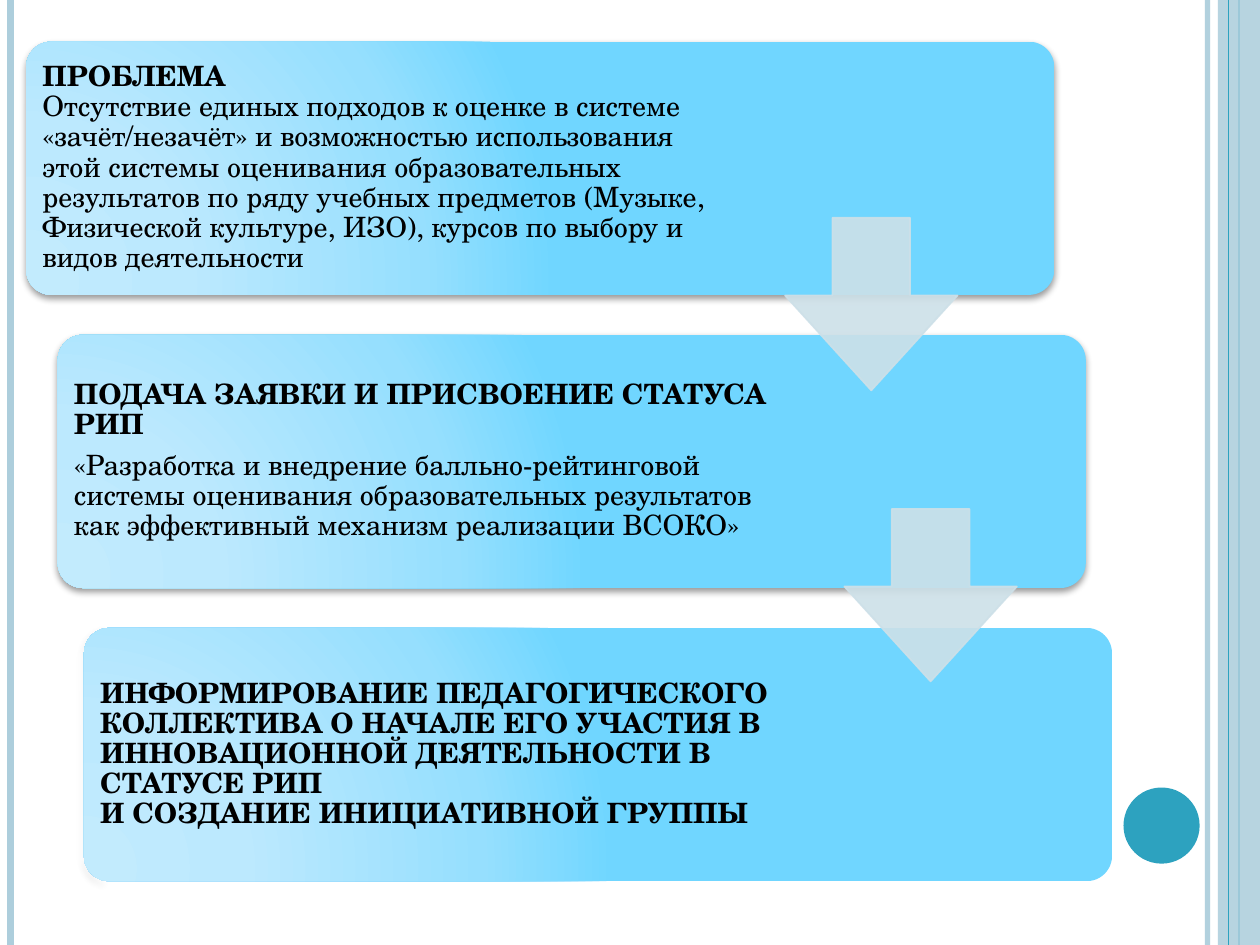
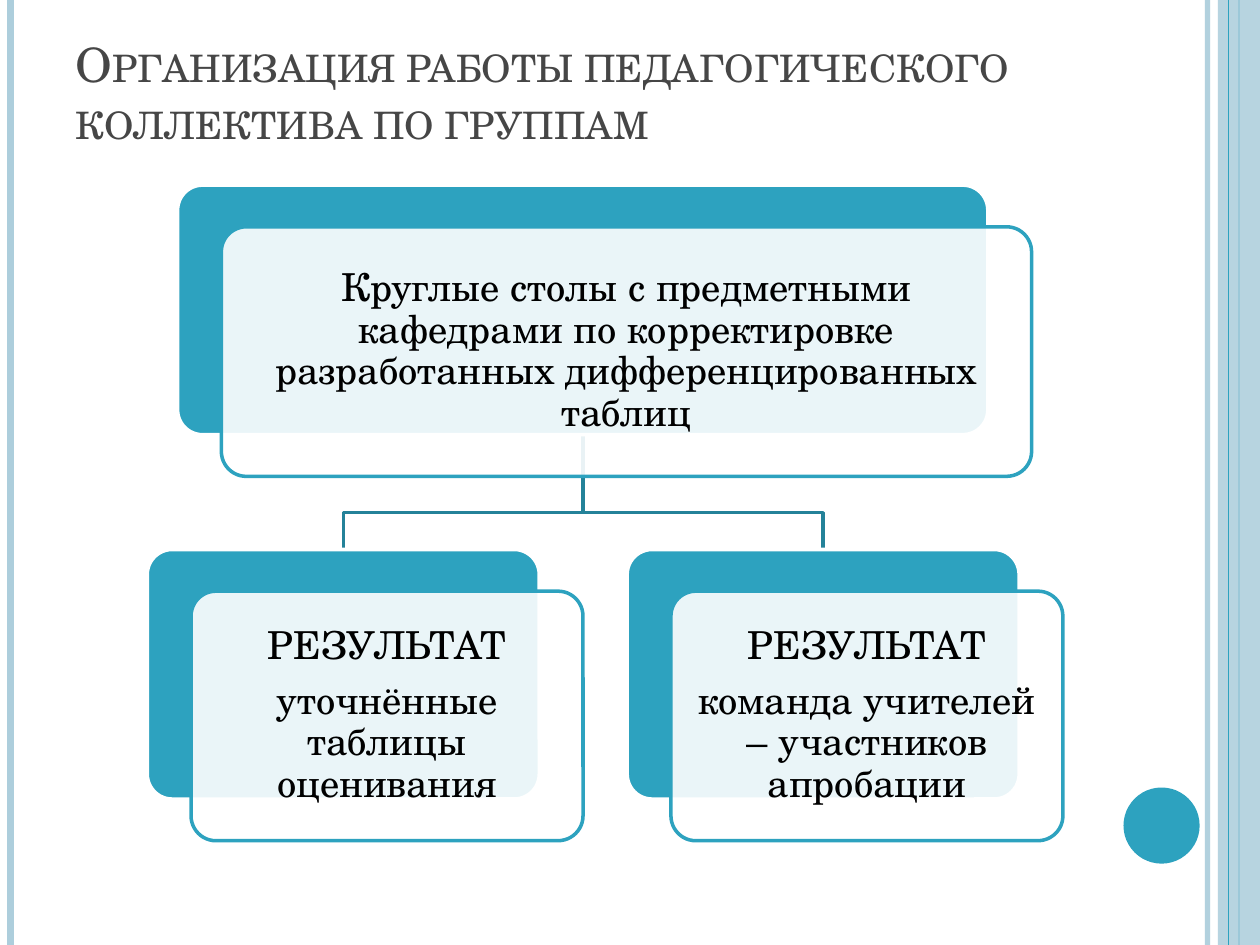
from lxml.etree import SubElement as Sub
from pptx import Presentation
from pptx.dml.color import RGBColor as RGB
from pptx.enum.shapes import MSO_CONNECTOR as LINE, MSO_SHAPE as KIND
from pptx.enum.text import MSO_ANCHOR as ANCHOR, PP_ALIGN as ALIGN
from pptx.oxml import parse_xml
from pptx.oxml.ns import nsdecls, qn
from pptx.util import Pt

FONT = "TeX Gyre Schola"
BLACK, WHITE = RGB(0, 0, 0), RGB(255, 255, 255)
GREY = RGB(0x46, 0x46, 0x46)
PALE = RGB(0xAD, 0xCE, 0xDC)
TEAL = RGB(0x2D, 0xA2, 0xBF)
DEEP = RGB(0x24, 0x82, 0x99)
MIST = RGB(0xCD, 0xE0, 0xE8)
GLOW = [(0, RGB(0xC2, 0xEB, 0xFD)), (30, RGB(0xBC, 0xE9, 0xFE)),
        (75, RGB(0x96, 0xDF, 0xFE)), (100, RGB(0x70, 0xD6, 0xFF))]


def draw(slide, kind, x, y, w, h, fill=WHITE, edge=None, thick=1, alpha=100, adj=()):
    shape = slide.shapes.add_shape(kind, Pt(x), Pt(y), Pt(w), Pt(h))
    shape.shadow.inherit = False
    for i, part in enumerate(adj):
        shape.adjustments[i] = part
    shape.fill.solid()
    shape.fill.fore_color.rgb = fill
    if edge is None:
        shape.line.fill.background()
    else:
        shape.line.color.rgb = edge
        shape.line.width = Pt(thick)
    # Transparency goes wherever the fill colour is used
    for tint in shape.element.spPr.iter(qn("a:srgbClr")):
        if alpha < 100 and tint.get("val") == str(fill):
            Sub(tint, qn("a:alpha"), val=str(alpha * 1000))
    return shape


def write(slide, text, x, y, w, h, size=16, color=BLACK, bold=0, align=ALIGN.LEFT,
          anchor=ANCHOR.MIDDLE, inset=(5, 5), lead=0.9, after=0, caps=False):
    """Write one paragraph per line of text; the first `bold` ones are bold."""
    frame = slide.shapes.add_textbox(Pt(x), Pt(y), Pt(w), Pt(h)).text_frame
    frame.word_wrap = True
    frame.vertical_anchor = anchor
    frame.margin_left = frame.margin_right = Pt(inset[0])
    frame.margin_top = frame.margin_bottom = Pt(inset[1])
    for i, line in enumerate(text.split("\n")):
        para = frame.add_paragraph() if i else frame.paragraphs[0]
        para.alignment, para.line_spacing = align, lead
        para.space_after = Pt(after)
        run = para.add_run()
        run.text = line
        font = run.font
        font.name, font.size, font.bold = FONT, Pt(size), i < bold
        font.color.rgb = color
        if caps:
            run.font._element.set("cap", "small")


deck = Presentation()
deck.slide_width, deck.slide_height = Pt(720), Pt(540)
first, second = [deck.slides.add_slide(deck.slide_layouts[6]) for _ in range(2)]

# Shared side bands and disc
bars = [(690, PALE, 3), (6, PALE, 4.5), (708, TEAL, 1.5), (702, TEAL, 0.75)]
for slide in (first, second):
    for x, color, thick in bars:
        if x == 702:
            draw(slide, KIND.RECTANGLE, 696, 0, 24, 540, fill=PALE, alpha=87)
        bar = slide.shapes.add_connector(LINE.STRAIGHT, Pt(x), 0, Pt(x), Pt(540))
        bar.line.color.rgb, bar.line.width = color, Pt(thick)
        Sub(bar.element.spPr, qn("a:effectLst"))
        if x == 690:
            tint = next(bar.element.spPr.iter(qn("a:srgbClr")))
            Sub(tint, qn("a:alpha"), val="93000")
    draw(slide, KIND.OVAL, 642, 450, 43.5, 43.5, fill=TEAL)

# Slide 1: three steps going down
stops = "".join(f'<a:gs pos="{pos * 1000}"><a:srgbClr val="{color}"/></a:gs>'
                for pos, color in GLOW)
GRAD = (f'<a:gradFill {nsdecls("a")} rotWithShape="1"><a:gsLst>{stops}</a:gsLst>'
        '<a:path path="circle"><a:fillToRect l="5000" t="100000" r="120000" b="10000"/>'
        '</a:path></a:gradFill>')
SHADE = (f'<a:effectLst {nsdecls("a")}><a:outerShdw blurRad="50800" dist="25400" '
         'dir="5400000" rotWithShape="0"><a:srgbClr val="000000"><a:alpha val="40000"/>'
         '</a:srgbClr></a:outerShdw></a:effectLst>')
steps = [
    (15, 407.5, 1, 0, "ПРОБЛЕМА\nОтсутствие единых подходов к оценке в системе "
     "«зачёт/незачёт» и возможностью использования этой системы оценивания "
     "образовательных результатов по ряду учебных предметов (Музыке, Физической "
     "культуре, ИЗО), курсов по выбору и видов деятельности"),
    (33, 418.5, 1, 6, "ПОДАЧА ЗАЯВКИ И ПРИСВОЕНИЕ СТАТУСА РИП\n«Разработка и внедрение "
     "балльно-рейтинговой системы оценивания образовательных результатов как "
     "эффективный механизм реализации ВСОКО»"),
    (48, 418.5, 2, 0, "ИНФОРМИРОВАНИЕ ПЕДАГОГИЧЕСКОГО КОЛЛЕКТИВА О НАЧАЛЕ ЕГО УЧАСТИЯ В "
     "ИННОВАЦИОННОЙ ДЕЯТЕЛЬНОСТИ В СТАТУСЕ РИП\nИ СОЗДАНИЕ ИНИЦИАТИВНОЙ ГРУППЫ"),
]
for i, (x, wide, bold, after, text) in enumerate(steps):
    y = 23.8 + 167.5 * i
    card = draw(first, KIND.ROUNDED_RECTANGLE, x, y, 587.5, 144.7, adj=[0.1])
    props = card.element.spPr
    props.replace(props.find(qn("a:solidFill")), parse_xml(GRAD))
    props.replace(props.find(qn("a:effectLst")), parse_xml(SHADE))
    write(first, text, x + 4.3, y + 4.3, wide, 136, bold=bold, after=after)

# Arrows between the steps
for x, y in [(448.6, 124.5), (482.5, 290.8)]:
    draw(first, KIND.DOWN_ARROW, x, y, 98.6, 98.6, fill=MIST, edge=MIST, alpha=90,
         adj=[0.45, 0.55])

# Slide 2: one box that leads to two results
HIGH = 142.6
groups = [
    (101.5, 105.8, 463, "Круглые столы с предметными кафедрами по корректировке "
     "разработанных дифференцированных таблиц"),
    (84.2, 314, 224, "РЕЗУЛЬТАТ\nуточнённые таблицы оценивания"),
    (358.4, 314, 224, "РЕЗУЛЬТАТ\nкоманда учителей – участников апробации"),
]

# Branches from the top box to each result
left, top, wide, _ = groups[0]
mid, base = left + wide / 2, top + HIGH
for x, y, w, _ in groups[1:]:
    end = x + w / 2
    pen = second.shapes.build_freeform(Pt(mid), Pt(base))
    pen.add_line_segments([(Pt(mid), Pt(293)), (Pt(end), Pt(293)), (Pt(end), Pt(y))],
                          close=False)
    branch = pen.convert_to_shape()
    branch.shadow.inherit = False
    branch.fill.background()
    branch.line.color.rgb, branch.line.width = DEEP, Pt(2)

# Boxes, each with a clear card shifted over it
for x, y, w, text in groups:
    draw(second, KIND.ROUNDED_RECTANGLE, x, y, w, HIGH, fill=TEAL, edge=WHITE, thick=2,
         adj=[0.1])
    x, y = x + 25, y + 23.8
    draw(second, KIND.ROUNDED_RECTANGLE, x, y, w, HIGH, edge=TEAL, thick=2, alpha=90,
         adj=[0.1])
    write(second, text, x + 4.2, y + 4, w - 8.4, HIGH - 8, size=22, align=ALIGN.CENTER,
          inset=(6.6, 6.6), after=7.7)

write(second, "Организация работы педагогического коллектива по группам",
      36, 21.6, 588, 67, size=27, color=GREY, anchor=ANCHOR.BOTTOM, inset=(7.2, 3.6),
      lead=1.0, caps=True)

deck.save("out.pptx")
